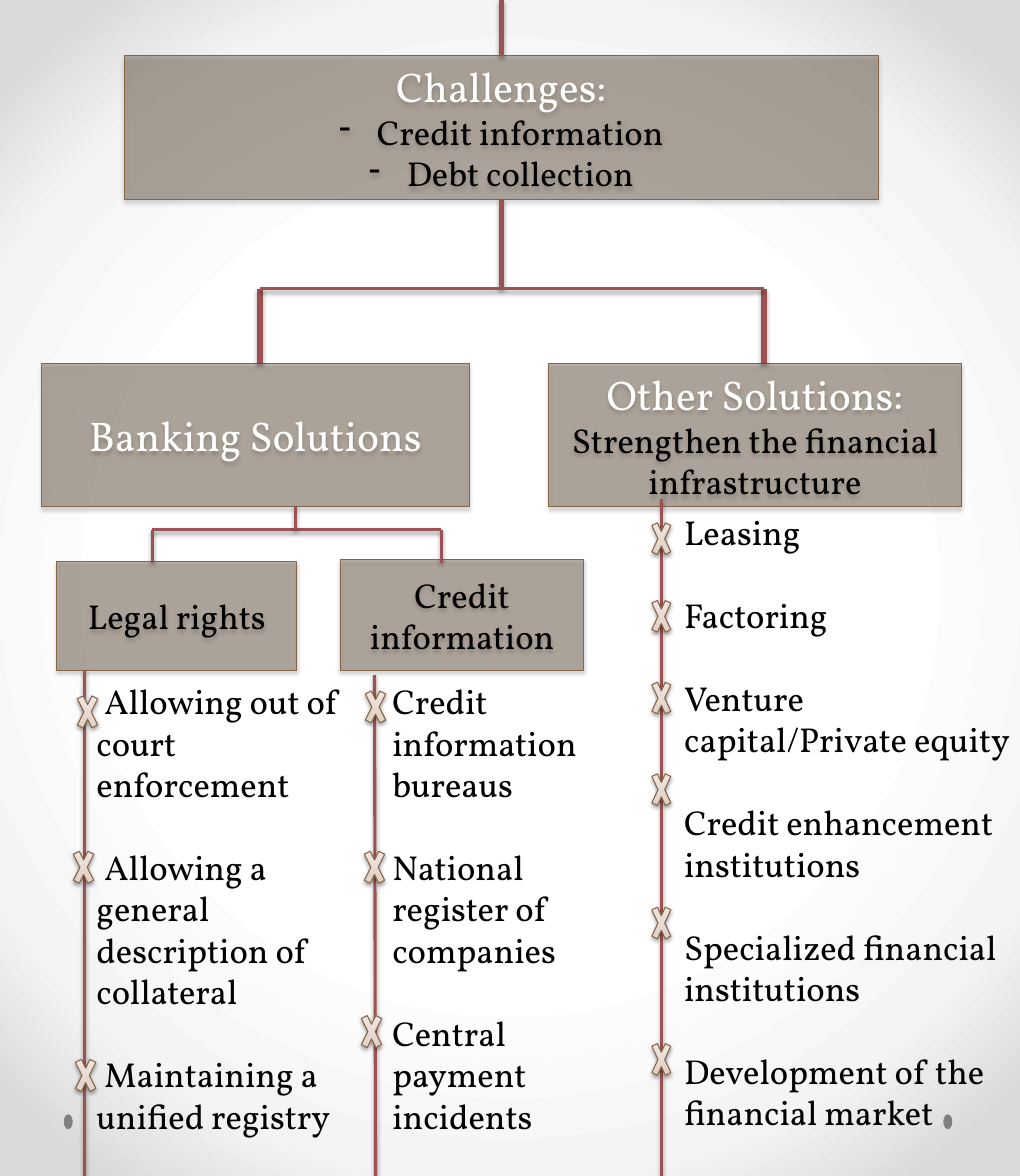
"""Build a slide charting credit challenges and their banking and other solutions."""
from dataclasses import dataclass

import lxml.etree
import pptx
import pptx.dml.color
import pptx.enum.shapes
import pptx.enum.text
import pptx.oxml
import pptx.oxml.ns
import pptx.util

WIDTH = pptx.util.Inches(10.24)
HEIGHT = pptx.util.Inches(11.81)
FONT = "Vollkorn"
HEADING_SIZE, BODY_SIZE, ITEM_GAP = 30, 25, 30
THICK, THIN = 4, 2.25
COLORS = {
    "box": "634D36", "box_line": "846648", "branch": "9C5252", "marker_line": "836445",
    "dot": "808080", "heading": "FFFFFF", "body": "000000", "shadow": "000000",
}
BACKGROUND_STOPS = [(50, "FFFFFF"), (76, "F4F4F4"), (92, "DADADA")]
MARKER_STOPS = [(0, "DAC4B4"), (35, "E4D5CB"), (100, "F5EFEB")]
LINEAR = '<a:lin ang="16200000" scaled="0"/>'
RADIAL = '<a:path path="circle"><a:fillToRect l="50000" t="50000" r="50000" b="50000"/></a:path>'
PRESETS = pptx.enum.shapes.MSO_SHAPE


@dataclass
class Area:
    """Left, top, width and height in percent of the slide."""
    left: float
    top: float
    width: float
    height: float


@dataclass
class Box:
    area: Area
    heading: str = ""
    details: tuple[str, ...] = ()
    dashed: bool = False


@dataclass
class Branch:
    """A connector from one point to another, in percent of the slide."""
    start: tuple[float, float]
    end: tuple[float, float]
    weight: float = THIN


@dataclass
class Listing:
    """Items beside a stem, with markers given by centre and top."""
    area: Area
    stem: Branch
    items: tuple[str, ...]
    markers: list[tuple[float, float]]
    marker_width: float = 2.73
    indent: float = 0


CHALLENGES = Box(Area(12.2, 4.74, 73.9, 12.19), "Challenges:",
                 ("Credit information", "Debt collection"), dashed=True)
TRUNK = CHALLENGES.area.left + CHALLENGES.area.width / 2
BOXES = [
    Box(Area(4.1, 30.91, 41.89, 12.19), "Banking Solutions"),
    Box(Area(53.81, 30.91, 40.43, 12.19), "Other Solutions:",
        ("Strengthen the financial infrastructure",)),
    Box(Area(33.4, 47.59, 23.83, 9.4), details=("Credit information",)),
    Box(Area(5.57, 47.76, 23.54, 9.23), details=("Legal rights",)),
]
BRANCHES = [
    Branch((74.9, 24.56), (74.9, 30.91), THICK),
    Branch((25.49, 24.56), (25.49, 30.91), THICK),
    Branch((25.49, 24.56), (74.9, 24.56)),
    Branch((14.94, 45.05), (43.26, 45.05)),
    Branch((29, 45.05), (29, 43.01)),
    Branch((14.94, 45.05), (14.94, 47.84)),
    Branch((43.26, 45.05), (43.26, 47.84)),
]
LISTINGS = [
    Listing(Area(66.11, 43.01, 33.89, 56.99), Branch((64.84, 42.42), (64.84, 100)),
            ("Leasing", "Factoring", "Venture capital/Private equity",
             "Credit enhancement institutions", "Specialized financial institutions",
             "Development of the financial market"),
            [(64.84, top) for top in (43.44, 50.04, 56.99, 64.78, 76.12, 87.72)], 2.54),
    Listing(Area(37.5, 57.41, 22.85, 40.05), Branch((36.72, 57.41), (36.82, 100)),
            ("Credit information bureaus", "National register of companies",
             "Central payment incidents"),
            [(36.82, 57.75), (36.72, 71.38), (36.43, 85.35)]),
    Listing(Area(8.5, 57.41, 26.95, 42.59), Branch((8.3, 56.99), (8.3, 100)),
            ("Allowing out of court enforcement",
             "Allowing a general description of collateral",
             "Maintaining a unified registry"),
            [(8.59, 58.17), (8.2, 71.38), (8.4, 89.08)], indent=0.08),
]
DOTS = [Area(left, 94.75, 0.88, 1.27) for left in (92.48, 6.25)]


def across(share: float) -> int:
    return round(WIDTH * share / 100)


def down(share: float) -> int:
    return round(HEIGHT * share / 100)


def place(area: Area) -> tuple[int, int, int, int]:
    return across(area.left), down(area.top), across(area.width), down(area.height)


def color(name: str) -> pptx.dml.color.RGBColor:
    return pptx.dml.color.RGBColor.from_string(COLORS[name])


def gradient(stops: list[tuple[int, str]], direction: str) -> str:
    stop_list = "".join(f'<a:gs pos="{position * 1000}"><a:srgbClr val="{value}"/></a:gs>'
                        for position, value in stops)
    return (f'<a:gradFill {pptx.oxml.ns.nsdecls("a")} rotWithShape="1">'
            f'<a:gsLst>{stop_list}</a:gsLst>{direction}</a:gradFill>')


def add_shadow(shape, distance: float = 1.8, opacity: int = 35) -> None:
    shape.element.spPr.append(pptx.oxml.parse_xml(
        f'<a:effectLst {pptx.oxml.ns.nsdecls("a")}>'
        f'<a:outerShdw blurRad="{pptx.util.Pt(3.1)}" dist="{pptx.util.Pt(distance)}" '
        f'dir="5400000" rotWithShape="0"><a:srgbClr val="{COLORS["shadow"]}">'
        f'<a:alpha val="{opacity * 1000}"/></a:srgbClr></a:outerShdw></a:effectLst>'))


def indent(paragraph, margin: float, first: float):
    properties = paragraph._p.get_or_add_pPr()
    properties.set("marL", str(pptx.util.Inches(margin)))
    properties.set("indent", str(pptx.util.Inches(first)))
    return properties


def format_runs(paragraph, size: int, color_name: str) -> None:
    for run in paragraph.runs:
        run.font.name = FONT
        run.font.size = pptx.util.Pt(size)
        run.font.color.rgb = color(color_name)


def draw_box(slide, box: Box):
    shape = slide.shapes.add_shape(PRESETS.FLOWCHART_PROCESS, *place(box.area))
    shape.fill.solid()
    shape.fill.fore_color.rgb = color("box")
    fill_color = shape.element.spPr.find(".//" + pptx.oxml.ns.qn("a:srgbClr"))
    lxml.etree.SubElement(fill_color, pptx.oxml.ns.qn("a:alpha")).set("val", "40000")
    shape.line.color.rgb = color("box_line")
    shape.line.width = pptx.util.Pt(0.75)
    add_shadow(shape)
    headings = (box.heading,) if box.heading else ()
    frame = shape.text_frame
    frame.text = "\n".join(headings + box.details)
    frame.vertical_anchor = pptx.enum.text.MSO_ANCHOR.MIDDLE
    for index, paragraph in enumerate(frame.paragraphs):
        paragraph.alignment = pptx.enum.text.PP_ALIGN.CENTER
        if index < len(headings):
            format_runs(paragraph, HEADING_SIZE, "heading")
            continue
        format_runs(paragraph, BODY_SIZE, "body")
        if box.dashed:
            properties = indent(paragraph, 0.38, -0.38)
            lxml.etree.SubElement(properties, pptx.oxml.ns.qn("a:buChar")).set("char", "-")
    return shape


def draw_branch(slide, branch: Branch):
    connector = slide.shapes.add_connector(
        pptx.enum.shapes.MSO_CONNECTOR.STRAIGHT,
        across(branch.start[0]), down(branch.start[1]), across(branch.end[0]), down(branch.end[1]))
    connector.line.color.rgb = color("branch")
    connector.line.width = pptx.util.Pt(branch.weight)
    add_shadow(connector)
    return connector


def draw_marker(slide, area: Area) -> None:
    marker = slide.shapes.add_shape(PRESETS.MATH_MULTIPLY, *place(area))
    marker.element.spPr.insert(2, pptx.oxml.parse_xml(gradient(MARKER_STOPS, LINEAR)))
    marker.line.color.rgb = color("marker_line")
    marker.line.width = pptx.util.Pt(0.75)
    add_shadow(marker, 1.6, 38)


def draw_listing(slide, listing: Listing) -> None:
    draw_branch(slide, listing.stem)
    frame = slide.shapes.add_textbox(*place(listing.area)).text_frame
    frame.word_wrap = True
    frame.text = "\n".join(listing.items)
    for paragraph in frame.paragraphs:
        paragraph.space_after = pptx.util.Pt(ITEM_GAP)
        indent(paragraph, 0, listing.indent)
        format_runs(paragraph, BODY_SIZE, "body")
    for center, top in listing.markers:
        draw_marker(slide, Area(center - listing.marker_width / 2, top, listing.marker_width, 4.74))


def draw_dot(slide, area: Area) -> None:
    dot = slide.shapes.add_shape(PRESETS.OVAL, *place(area))
    dot.shadow.inherit = False
    dot.fill.solid()
    dot.fill.fore_color.rgb = color("dot")
    dot.line.fill.background()


def main() -> None:
    presentation = pptx.Presentation()
    presentation.slide_width, presentation.slide_height = WIDTH, HEIGHT
    slide = presentation.slides.add_slide(presentation.slide_layouts[6])
    slide.element.cSld.insert(0, pptx.oxml.parse_xml(
        f'<p:bg {pptx.oxml.ns.nsdecls("p", "a")}><p:bgPr>'
        f'{gradient(BACKGROUND_STOPS, RADIAL)}<a:effectLst/></p:bgPr></p:bg>'))
    for dot in DOTS:
        draw_dot(slide, dot)
    challenges = draw_box(slide, CHALLENGES)
    draw_branch(slide, Branch((TRUNK, 0), (TRUNK, 4.74), THICK)).end_connect(challenges, 0)
    draw_branch(slide, Branch((TRUNK, 16.93), (TRUNK, 24.56), THICK)).begin_connect(challenges, 2)
    for box in BOXES:
        draw_box(slide, box)
    for branch in BRANCHES:
        draw_branch(slide, branch)
    for listing in LISTINGS:
        draw_listing(slide, listing)
    presentation.save("out.pptx")


if __name__ == "__main__":
    main()
